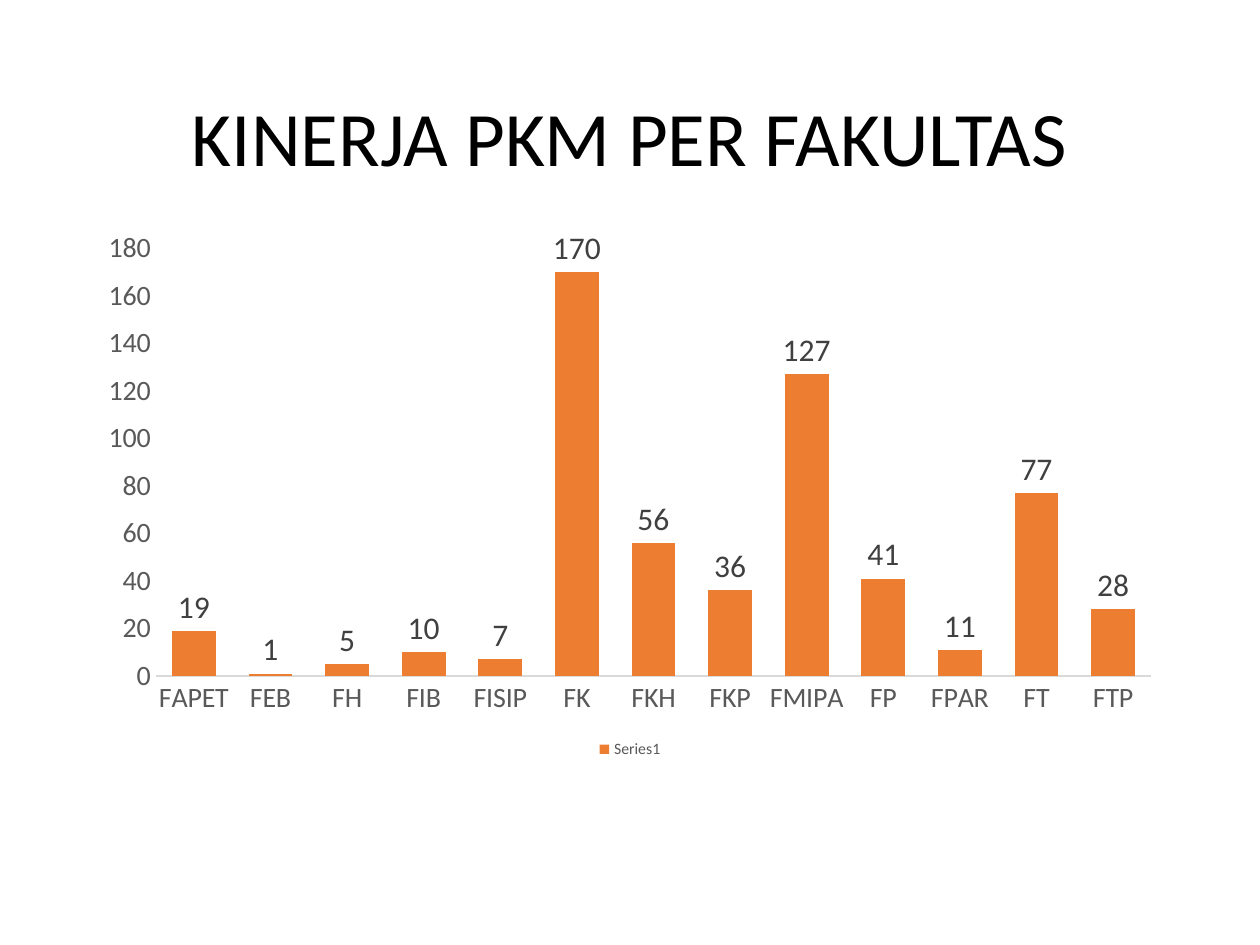
import pptx
import pptx.chart.data
import pptx.dml.color
import pptx.enum.chart
import pptx.enum.text
import pptx.util
from dataclasses import dataclass

Inches = pptx.util.Inches
Pt = pptx.util.Pt


@dataclass(frozen=True)
class Theme:
    face: str = "Calibri"
    background: str = "FFFFFF"
    ink: str = "000000"
    muted: str = "595959"
    value: str = "404040"
    bar: str = "ED7D31"
    rule: str = "D9D9D9"
    title_size: int = 44
    value_size: int = 18
    axis_size: int = 16
    chart_size: int = 10
    legend_size: int = 9


def rgb(code):
    return pptx.dml.color.RGBColor.from_string(code)


def style_font(font, size, color):
    settings = {"name": theme.face, "size": Pt(size), "bold": False}
    for attribute, setting in settings.items():
        setattr(font, attribute, setting)
    font.color.rgb = rgb(color)


theme = Theme()
deck = pptx.Presentation()
deck.slide_width, deck.slide_height = Inches(10), Inches(7.5)
slide = deck.slides.add_slide(deck.slide_layouts[5])
slide.background.fill.solid()
slide.background.fill.fore_color.rgb = rgb(theme.background)

# Heading
heading = slide.shapes.title
placement = {"left": 0.69, "top": 0.4, "width": 8.62, "height": 1.45}
for side, length in placement.items():
    setattr(heading, side, Inches(length))
heading.text_frame.text = "KINERJA PKM PER FAKULTAS"
heading.text_frame.vertical_anchor = pptx.enum.text.MSO_ANCHOR.MIDDLE
heading_line = heading.text_frame.paragraphs[0]
heading_line.alignment = pptx.enum.text.PP_ALIGN.CENTER
heading_line.line_spacing = 0.9
style_font(heading_line.runs[0].font, theme.title_size, theme.ink)

# PKM count for each faculty
faculty_counts = {
    "FAPET": 19, "FEB": 1, "FH": 5, "FIB": 10, "FISIP": 7, "FK": 170, "FKH": 56,
    "FKP": 36, "FMIPA": 127, "FP": 41, "FPAR": 11, "FT": 77, "FTP": 28,
}
performance = pptx.chart.data.CategoryChartData()
performance.categories = list(faculty_counts)
performance.add_series("Series1", list(faculty_counts.values()))
chart = slide.shapes.add_chart(
    pptx.enum.chart.XL_CHART_TYPE.COLUMN_CLUSTERED,
    Inches(0.69), Inches(1.75), Inches(8.62), Inches(4.31), performance,
).chart
chart.has_title = False
style_font(chart.font, theme.chart_size, theme.ink)

# Bars and their values
bars = chart.plots[0]
bars.gap_width = 75
bars.vary_by_categories = False
bars.series[0].format.fill.solid()
bars.series[0].format.fill.fore_color.rgb = rgb(theme.bar)
counts = bars.series[0].data_labels
counts.show_value = True
counts.position = pptx.enum.chart.XL_LABEL_POSITION.OUTSIDE_END
style_font(counts.font, theme.value_size, theme.value)

# Axes
no_tick = pptx.enum.chart.XL_TICK_MARK.NONE
for axis in (chart.category_axis, chart.value_axis):
    axis_format = {
        "has_major_gridlines": False,
        "major_tick_mark": no_tick,
        "minor_tick_mark": no_tick,
    }
    for attribute, setting in axis_format.items():
        setattr(axis, attribute, setting)
    style_font(axis.tick_labels.font, theme.axis_size, theme.muted)
chart.category_axis.format.line.color.rgb = rgb(theme.rule)
chart.category_axis.format.line.width = Pt(0.75)
chart.value_axis.format.line.fill.background()
chart.value_axis.minimum_scale = 0
chart.value_axis.maximum_scale = 180
chart.value_axis.major_unit = 20

# Legend
chart.has_legend = True
chart.legend.position = pptx.enum.chart.XL_LEGEND_POSITION.BOTTOM
chart.legend.include_in_layout = False
style_font(chart.legend.font, theme.legend_size, theme.muted)

deck.save("out.pptx")
